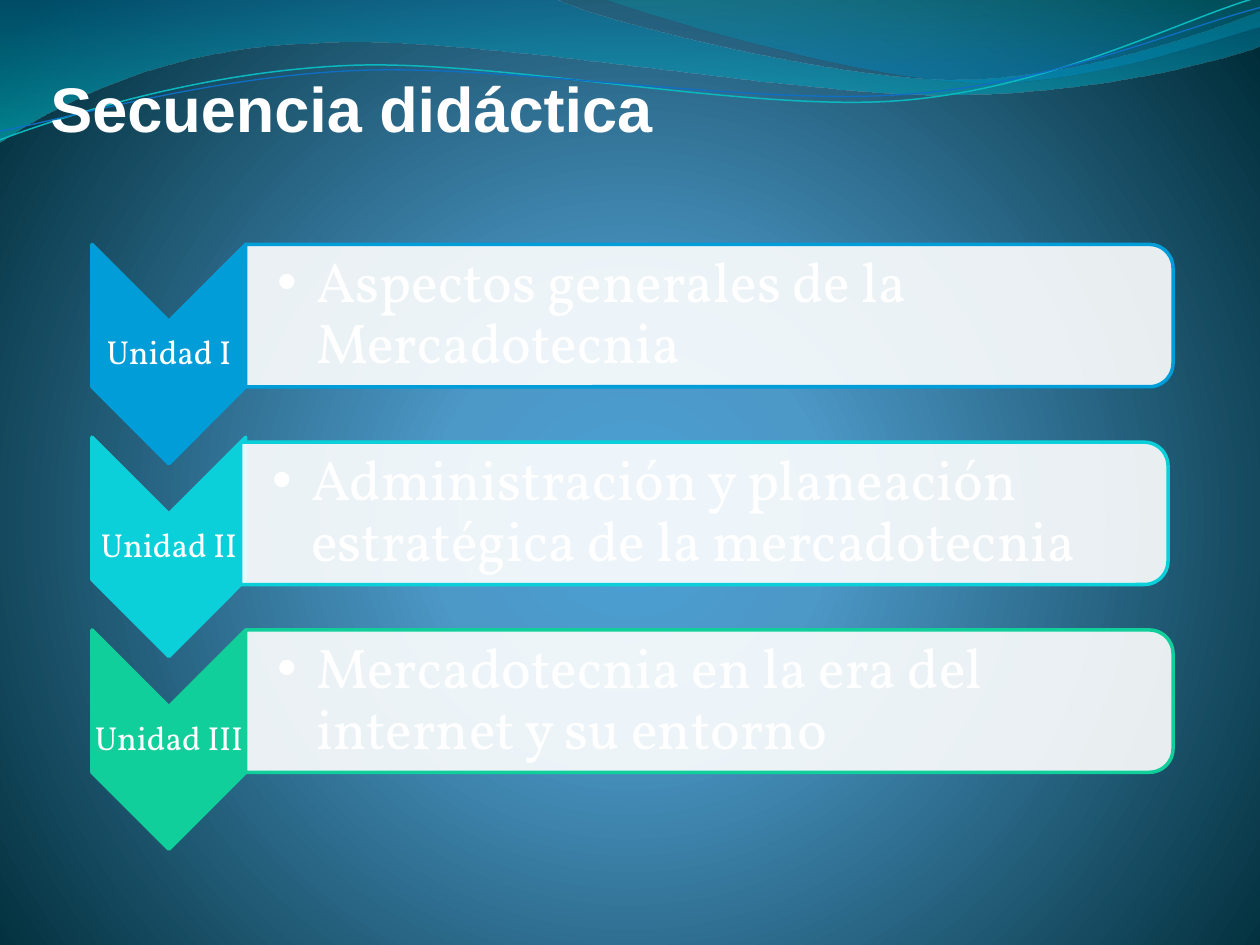
from lxml import etree
from pptx import Presentation
from pptx import util as u
from pptx.dml.color import RGBColor
from pptx.enum import shapes, text
from pptx.oxml import ns

COLORS = {
    "white": "FFFFFF", "blue": "009DD9", "cyan": "0BD0D9", "green": "10CF9B",
    "wave_cyan": "0AB8BF", "wave_blue": "0F6FC6",
}
BACKDROP = [(0, "4AA0D6", 100), (25, "4C98C7", 100), (100, "002C38", 100)]
UNITS = [
    ("Unidad I", "Aspectos generales de la Mercadotecnia", "blue", (0, 0)),
    ("Unidad II", "Administración y planeación estratégica de la mercadotecnia",
     "cyan", (-0.04, 0.04)),
    ("Unidad III", "Mercadotecnia en la era del internet y su entorno", "green", (0, 0)),
]
BANDS = [
    ([(0, 0), (4.4, -0.01), (4.76, 0.17, 6.64, 0.63, 7.58, 0.63),
      (8.53, 0.63, 9.58, 0.26, 10, 0.09), (10.01, 0.36),
      (9.83, 0.44, 8.7, 0.76, 7.46, 0.75), (6.22, 0.75, 3.82, 0.28, 2.57, 0.34),
      (1.29, 0.36, 0.46, 0.83, -0.01, 1.13), (0, 0)],
     [(0, "0074A1", 45), (100, "00C6CF", 55)]),
    ([(4.79, -0.01), (5.09, 0.11, 6.82, 0.62, 7.69, 0.65),
      (8.56, 0.69, 9.61, 0.32, 10, 0.21), (10, 0), (4.79, -0.01)],
     [(0, "00A1A9", 30), (80, "008BBF", 45)]),
]
STRANDS = [
    ([(0, 1.11), (0.48, 0.93, 1.58, 0.57, 2.77, 0.52),
      (3.95, 0.47, 5.93, 0.89, 7.13, 0.8), (8.33, 0.71, 9.38, 0.15, 9.98, -0.02)],
     "wave_cyan", 0.85),
    ([(0, 1.04), (0.47, 0.96, 1.64, 0.61, 2.83, 0.56),
      (4.03, 0.51, 5.97, 0.84, 7.17, 0.75), (8.36, 0.67, 9.41, 0.21, 10, 0.06)],
     "wave_blue", 0.75),
]


def color(name):
    return RGBColor.from_string(COLORS[name])


def add_node(parent, tag, **values):
    node = etree.SubElement(parent, ns.qn(tag))
    for key, value in values.items():
        node.set(key, str(value))
    return node


def set_gradient(fill, owner, stops, center=None):
    fill.gradient()
    gradient = owner.find(ns.qn("a:gradFill"))
    for child in list(gradient):
        gradient.remove(child)
    stop_list = add_node(gradient, "a:gsLst")
    for position, value, opacity in stops:
        stop = add_node(stop_list, "a:gs", pos=position * 1000)
        shade = add_node(stop, "a:srgbClr", val=value)
        if opacity < 100:
            add_node(shade, "a:alpha", val=opacity * 1000)
    if center:
        route = add_node(gradient, "a:path", path="circle")
        sides = {side: amount * 1000 for side, amount in zip("ltrb", center)}
        add_node(route, "a:fillToRect", **sides)
    else:
        add_node(gradient, "a:lin", ang=5400000, scaled=1)


def add_curve(page, steps, close):
    anchors = [tuple(map(u.Inches, step[-2:])) for step in steps]
    builder = page.shapes.build_freeform(*anchors[0])
    builder.add_line_segments(anchors[1:], close=close)
    curve = builder.convert_to_shape()
    curve.shadow.inherit = False
    segments = curve.element.xpath(".//a:lnTo")
    for segment, step in zip(segments, steps[1:]):
        if len(step) == 6:
            bend = etree.Element(ns.qn("a:cubicBezTo"))
            for x, y in zip(step[::2], step[1::2]):
                add_node(bend, "a:pt", x=u.Inches(x) - curve.left, y=u.Inches(y) - curve.top)
            segment.getparent().replace(segment, bend)
    return curve


def add_waves(page):
    for steps, stops in BANDS:
        band = add_curve(page, steps, True)
        set_gradient(band.fill, band.element.spPr, stops)
        band.line.fill.background()
    for steps, name, width in STRANDS:
        strand = add_curve(page, steps, False)
        strand.fill.background()
        strand.line.color.rgb = color(name)
        strand.line.width = u.Pt(width)


def write_text(box, words, font, frame_format, para_format):
    frame = box.text_frame
    for key, value in frame_format.items():
        setattr(frame, key, value)
    para = frame.paragraphs[0]
    for key, value in para_format.items():
        setattr(para, key, value)
    span = para.add_run()
    span.text = words
    for key, value in font.items():
        setattr(span.font, key, value)
    span.font.color.rgb = color("white")
    return para


def place_title(page, left, top, width, height):
    title = page.shapes.title
    for key, value in dict(left=left, top=top, width=width, height=height).items():
        setattr(title, key, u.Inches(value))
    write_text(title, "Secuencia didáctica", dict(name="Arial", size=u.Pt(36), bold=True),
               dict(vertical_anchor=text.MSO_ANCHOR.TOP, word_wrap=True,
                    auto_size=text.MSO_AUTO_SIZE.SHAPE_TO_FIT_TEXT),
               dict(alignment=text.PP_ALIGN.LEFT))
    title.element.getparent().append(title.element)


def add_turned(page, kind, left, top, width, height, fill, line):
    shape = page.shapes.add_shape(
        kind, u.Inches(left + (width - height) / 2), u.Inches(top + (height - width) / 2),
        u.Inches(height), u.Inches(width))
    shape.rotation = 90
    shape.shadow.inherit = False
    shape.fill.solid()
    shape.fill.fore_color.rgb = color(fill)
    shape.line.color.rgb = color(line)
    shape.line.width = u.Pt(2)
    return shape


def add_label(page, left, top, width, height, margins, words, size, after, **para_format):
    box = page.shapes.add_textbox(*map(u.Inches, (left, top, width, height)))
    sides = ("margin_left", "margin_top", "margin_right", "margin_bottom")
    frame_format = dict(zip(sides, map(u.Inches, margins)),
                        word_wrap=True, vertical_anchor=text.MSO_ANCHOR.MIDDLE)
    return write_text(box, words, dict(name="Vollkorn", size=u.Pt(size)), frame_format,
                      dict(line_spacing=0.9, space_after=u.Pt(size * after), **para_format))


def add_unit(page, left, top, width, label, topic, name, nudge):
    arrow_width, arrow_height, panel_height = 1.22, 1.74, 1.13
    add_turned(page, shapes.MSO_SHAPE.CHEVRON, left, top, arrow_width, arrow_height,
               name, name)
    add_label(page, left, top + arrow_width / 2, arrow_width, arrow_height - arrow_width,
              [0.01] * 4, label, 19, 0.35, alignment=text.PP_ALIGN.CENTER)
    panel_left, panel_top = left + arrow_width + nudge[0], top + nudge[1]
    panel_width = width - arrow_width
    panel = add_turned(page, shapes.MSO_SHAPE.ROUND_2_SAME_RECTANGLE, panel_left, panel_top,
                       panel_width, panel_height, "white", name)
    shade = panel.element.spPr.find(ns.qn("a:solidFill"))[0]
    add_node(shade, "a:alpha", val=90000)
    para = add_label(page, panel_left, panel_top + 0.05, panel_width - 0.05, 1.02,
                     [0.25, 0.02, 0.02, 0.02], topic, 32, 0.15, level=1)
    layout = para._p.get_or_add_pPr()
    layout.set("marL", str(u.Inches(0.31)))
    layout.set("indent", str(u.Inches(-0.31)))
    add_node(layout, "a:buFont", typeface="Arial")
    add_node(layout, "a:buChar", char="•")


def add_sequence(page, left, top, width, step):
    for index, unit in enumerate(UNITS):
        add_unit(page, left, top + index * step, width, *unit)


def main():
    deck = Presentation()
    deck.slide_width, deck.slide_height = u.Inches(10), u.Inches(7.5)
    page = deck.slides.add_slide(deck.slide_layouts[5])
    fill = page.background.fill
    set_gradient(fill, page.element.xpath(".//p:bgPr")[0], BACKDROP, (10, 110, 10, 100))
    add_waves(page)
    place_title(page, 0.3, 0.5, 5.93, 0.71)
    add_sequence(page, 0.73, 1.94, 8.58, 1.53)
    deck.save("out.pptx")


if __name__ == "__main__":
    main()
